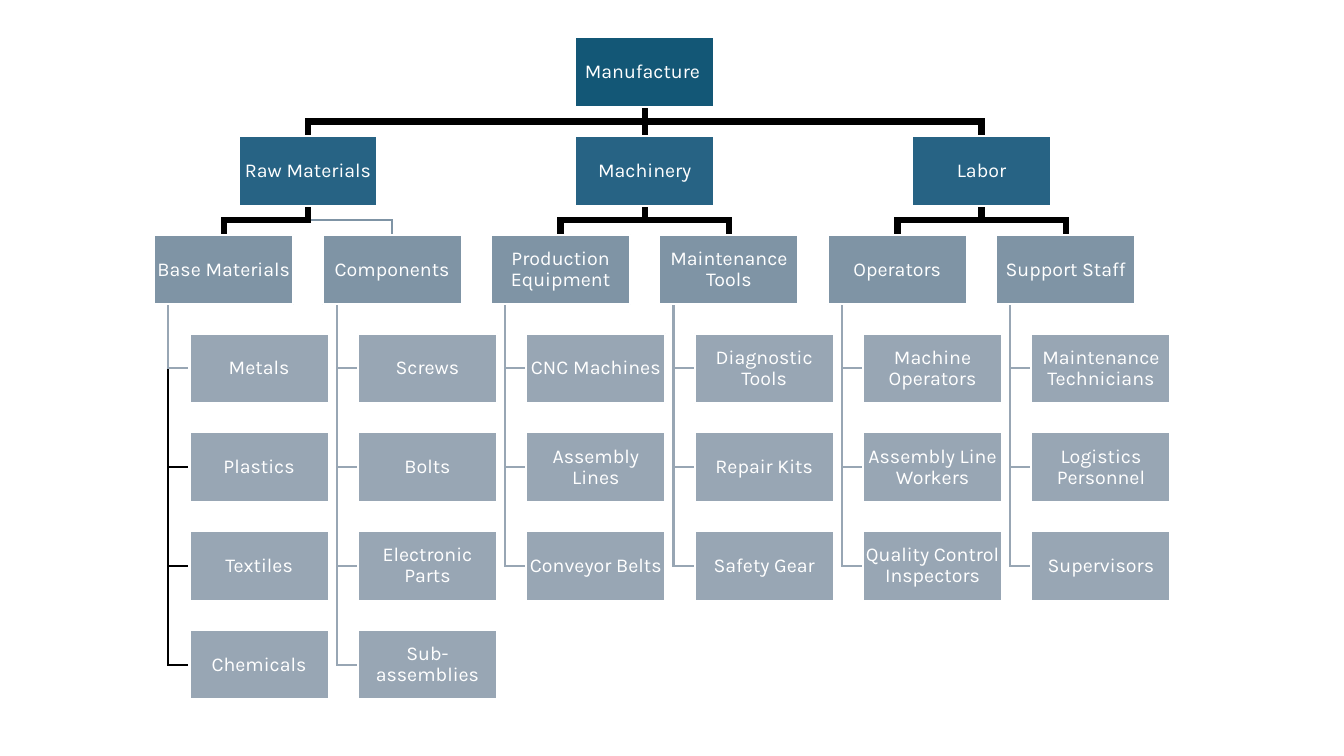
import pptx
import pptx.dml.color
import pptx.enum.shapes
import pptx.enum.text
import pptx.oxml
import pptx.util
from lxml import etree

Inches = pptx.util.Inches
BLACK, STEEL, MIST = "000000", "7F94A5", "98A6B4"
THIN, THICK = 1.5, 4.5

# Branches: name, line colour, line width, leaves
TREE = [
    ("Raw Materials", [
        ("Base Materials", BLACK, THICK, ["Metals", "Plastics", "Textiles", "Chemicals"]),
        ("Components", STEEL, THIN, ["Screws", "Bolts", "Electronic Parts", "Sub-assemblies"]),
    ]),
    ("Machinery", [
        ("Production Equipment", BLACK, THICK,
         ["CNC Machines", "Assembly Lines", "Conveyor Belts"]),
        ("Maintenance Tools", BLACK, THICK,
         ["Diagnostic Tools", "Repair Kits", "Safety Gear"]),
    ]),
    ("Labor", [
        ("Operators", BLACK, THICK,
         ["Machine Operators", "Assembly Line Workers", "Quality Control Inspectors"]),
        ("Support Staff", BLACK, THICK,
         ["Maintenance Technicians", "Logistics Personnel", "Supervisors"]),
    ]),
]

# Grid in inches
WIDE, HIGH = 1.38, 0.69
LEFT, TOP = 1.53, 0.37
COL, ROW = 1.67, 0.98
INDENT, STEM = 0.35, 0.14


def color(code):
    return pptx.dml.color.RGBColor.from_string(code)


def write(frame, text, font="Karla", size=14, ink="FFFFFF"):
    frame.word_wrap = True
    frame.vertical_anchor = pptx.enum.text.MSO_ANCHOR.MIDDLE
    frame.margin_left = frame.margin_right = Inches(0.01)
    frame.margin_top = frame.margin_bottom = Inches(0.01)
    par = frame.paragraphs[0]
    par.alignment = pptx.enum.text.PP_ALIGN.CENTER
    par.line_spacing = 0.9
    run = par.add_run()
    run.text = text
    run.font.name = font
    run.font.size = pptx.util.Pt(size)
    run.font.color.rgb = color(ink)


class Chart:
    fills = ["135776", "276384", STEEL, MIST]
    edge = "FFFFFF"

    def __init__(self, slide):
        self.shapes = slide.shapes

    def box(self, text, left, row):
        shape = self.shapes.add_shape(
            pptx.enum.shapes.MSO_SHAPE.RECTANGLE,
            Inches(left), Inches(TOP + row * ROW), Inches(WIDE), Inches(HIGH))
        shape.shadow.inherit = False
        shape.fill.solid()
        shape.fill.fore_color.rgb = color(self.fills[min(row, 3)])
        self.stroke(shape.line, self.edge, THIN)
        write(shape.text_frame, text)

    def stroke(self, line, ink, width):
        line.color.rgb = color(ink)
        line.width = pptx.util.Pt(width)

    def bend(self, points, ink, width):
        first, *rest = [(Inches(x), Inches(y)) for x, y in points]
        form = self.shapes.build_freeform(*first)
        form.add_line_segments(rest, close=False)
        shape = form.convert_to_shape()
        shape.shadow.inherit = False
        shape.fill.background()
        self.stroke(shape.line, ink, width)
        # Square corners
        join = etree.SubElement(shape.line._get_or_add_ln(), pptx.oxml.ns.qn("a:miter"))
        join.set("lim", "800000")

    def drop(self, x, top, low, ink, width):
        line = self.shapes.add_connector(
            pptx.enum.shapes.MSO_CONNECTOR.STRAIGHT,
            Inches(x), Inches(top), Inches(x), Inches(low))
        self.stroke(line.line, ink, width)
        etree.SubElement(line._element.spPr, pptx.oxml.ns.qn("a:effectLst"))

    def link(self, start, end, row, ink, width):
        """Join the centre of a parent in a row to a child one row below."""
        top, low = TOP + row * ROW + HIGH, TOP + (row + 1) * ROW
        if start == end:
            self.drop(start, top, low, ink, width)
        else:
            mid = (top + low) / 2
            self.bend([(start, top), (start, mid), (end, mid), (end, low)], ink, width)

    def hook(self, left, row, ink):
        """Join a branch to one of its leaves."""
        x, y = left + STEM, TOP + row * ROW + HIGH / 2
        self.bend([(x, TOP + 2 * ROW + HIGH), (x, y), (left + INDENT, y)], ink, THIN)


def main():
    deck = pptx.Presentation()
    deck.slide_width, deck.slide_height = Inches(13.33), Inches(7.5)
    chart = Chart(deck.slides.add_slide(deck.slide_layouts[6]))

    # Column positions
    sides = [LEFT + COL * (2 * i + 0.5) for i in range(len(TREE))]
    root = sides[1]
    half = WIDE / 2

    # Connectors, last branch at the back
    for i, (_, twigs) in reversed(list(enumerate(TREE))):
        for j, (name, ink, width, leaves) in reversed(list(enumerate(twigs))):
            left = LEFT + COL * (2 * i + j)
            for k in reversed(range(len(leaves))):
                dark = name == "Base Materials" and k > 0
                chart.hook(left, k + 3, BLACK if dark else MIST)
            chart.link(sides[i] + half, left + half, 1, ink, width)
        chart.link(root + half, sides[i] + half, 0, BLACK, THICK)

    # Boxes
    chart.box("Manufacture ", root, 0)
    for i, (title, twigs) in enumerate(TREE):
        chart.box(title, sides[i], 1)
        for j, (name, _, _, leaves) in enumerate(twigs):
            left = LEFT + COL * (2 * i + j)
            chart.box(name, left, 2)
            for k, leaf in enumerate(leaves):
                chart.box(leaf, left + INDENT, k + 3)

    deck.save("out.pptx")


if __name__ == "__main__":
    main()
